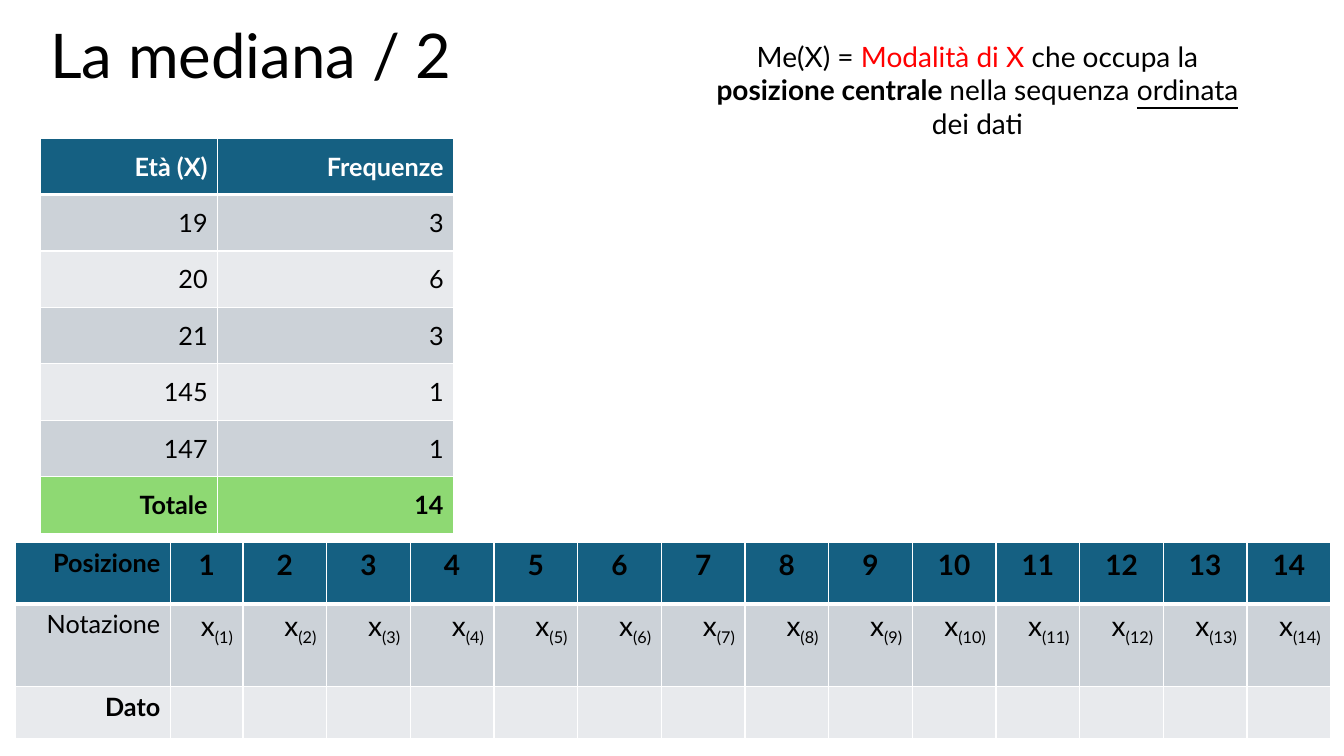
from dataclasses import dataclass

from lxml.etree import SubElement
from pptx import Presentation
from pptx.dml.color import RGBColor
from pptx.enum.text import MSO_ANCHOR, PP_ALIGN
from pptx.oxml.ns import qn
from pptx.util import Inches, Pt


@dataclass(frozen=True)
class Theme:
    font: str = "Lato"
    black: str = "000000"
    white: str = "FFFFFF"
    red: str = "FF0000"
    header: str = "156082"
    bands: tuple = ("CCD2D8", "E8EAED")
    total: str = "8ED973"
    title_size: int = 44
    large_size: int = 20
    body_size: int = 18
    thin_line: int = 1
    thick_line: int = 3


THEME = Theme()
AGES = [("19", "3"), ("20", "6"), ("21", "3"), ("145", "1"), ("147", "1")]
POSITIONS = range(1, 15)


def add_run(paragraph, text, size, color=THEME.black, baseline=None, **formats):
    run = paragraph.add_run()
    run.text = text
    values = {"name": THEME.font, "size": Pt(size), "bold": False, **formats}
    for name, value in values.items():
        setattr(run.font, name, value)
    run.font.color.rgb = RGBColor.from_string(color)
    if baseline is not None:
        run.font._element.set("baseline", str(baseline))


def add_text(slide, box, runs, size, alignment, anchor, line_spacing=1.0):
    shape = slide.shapes.add_textbox(*map(Inches, box))
    frame = shape.text_frame
    frame.word_wrap = True
    frame.vertical_anchor = anchor
    paragraph = frame.paragraphs[0]
    paragraph.alignment = alignment
    paragraph.line_spacing = line_spacing
    for text, formats in runs:
        add_run(paragraph, text, size, **formats)


def set_borders(cell, row_index):
    widths = {
        "a:lnL": THEME.thin_line,
        "a:lnR": THEME.thin_line,
        "a:lnT": THEME.thick_line if row_index == 1 else THEME.thin_line,
        "a:lnB": THEME.thick_line if row_index == 0 else THEME.thin_line,
    }
    properties = cell._tc.get_or_add_tcPr()
    for tag, width in widths.items():
        line = SubElement(properties, qn(tag), w=str(Pt(width)))
        fill = SubElement(line, qn("a:solidFill"))
        SubElement(fill, qn("a:srgbClr"), val=THEME.white)


def fill_cell(cell, row_index, color, runs, alignment, anchor):
    set_borders(cell, row_index)
    cell.fill.solid()
    cell.fill.fore_color.rgb = RGBColor.from_string(color)
    cell.vertical_anchor = anchor
    paragraph = cell.text_frame.paragraphs[0]
    paragraph.alignment = alignment
    for text, size, formats in runs:
        add_run(paragraph, text, size, **formats)


def add_table(slide, left, top, widths, heights):
    frame = slide.shapes.add_table(
        len(heights), len(widths), Inches(left), Inches(top),
        Inches(sum(widths)), Inches(sum(heights)))
    table = frame.table
    table.first_row = False
    table.horz_banding = False
    for column, width in zip(table.columns, widths):
        column.width = Inches(width)
    for row, height in zip(table.rows, heights):
        row.height = Inches(height)
    return table


def add_frequency_table(slide):
    rows = [("Età (X)", "Frequenze"), *AGES, ("Totale", "14")]
    last = len(rows) - 1
    table = add_table(slide, 0.4, 1.37, [1.76, 2.34], [0.56] * len(rows))
    for row_index, row in enumerate(rows):
        color = {0: THEME.header, last: THEME.total}.get(
            row_index, THEME.bands[(row_index - 1) % 2])
        formats = {
            "bold": row_index in (0, last),
            "color": THEME.white if row_index == 0 else THEME.black,
        }
        for column_index, text in enumerate(row):
            fill_cell(table.cell(row_index, column_index), row_index, color,
                      [(text, THEME.body_size, formats)],
                      PP_ALIGN.RIGHT, MSO_ANCHOR.MIDDLE)


def add_position_table(slide):
    bold = {"bold": True}
    subscript = {"baseline": -25000}
    size = THEME.large_size
    rows = [
        ("Posizione", bold, [[(f"{n}", size, bold)] for n in POSITIONS]),
        ("Notazione", {}, [[("x", size, {}), (f"({n})", size, subscript)]
                           for n in POSITIONS]),
        ("Dato", bold, [[] for _ in POSITIONS]),
    ]
    widths = [1.54, 0.72] + [0.83] * (len(POSITIONS) - 1)
    table = add_table(slide, 0.15, 5.38, widths, [0.61, 0.82, 0.52])
    colors = (THEME.header, *THEME.bands)
    for row_index, (label, formats, values) in enumerate(rows):
        cells = [[(label, THEME.body_size, formats)], *values]
        for column_index, runs in enumerate(cells):
            centred = row_index == 0 and column_index > 0
            fill_cell(table.cell(row_index, column_index), row_index,
                      colors[row_index], runs,
                      PP_ALIGN.CENTER if centred else PP_ALIGN.RIGHT,
                      MSO_ANCHOR.TOP)


def main():
    presentation = Presentation()
    presentation.slide_width = Inches(13.33)
    presentation.slide_height = Inches(7.5)
    slide = presentation.slides.add_slide(presentation.slide_layouts[6])
    add_text(slide, (0.4, 0.18, 9.75, 0.8), [("La mediana / 2", {})],
             THEME.title_size, PP_ALIGN.LEFT, MSO_ANCHOR.MIDDLE, 0.9)
    add_position_table(slide)
    add_frequency_table(slide)
    definition = [
        ("Me(X) = ", {}),
        ("Modalità di X ", {"color": THEME.red}),
        ("che occupa la ", {}),
        ("posizione centrale ", {"bold": True}),
        ("nella sequenza ", {}),
        ("ordinata", {"underline": True}),
        (" dei dati", {}),
    ]
    add_text(slide, (6.81, 0.34, 5.77, 1.11), definition,
             THEME.large_size, PP_ALIGN.CENTER, MSO_ANCHOR.TOP)
    presentation.save("out.pptx")


if __name__ == "__main__":
    main()
